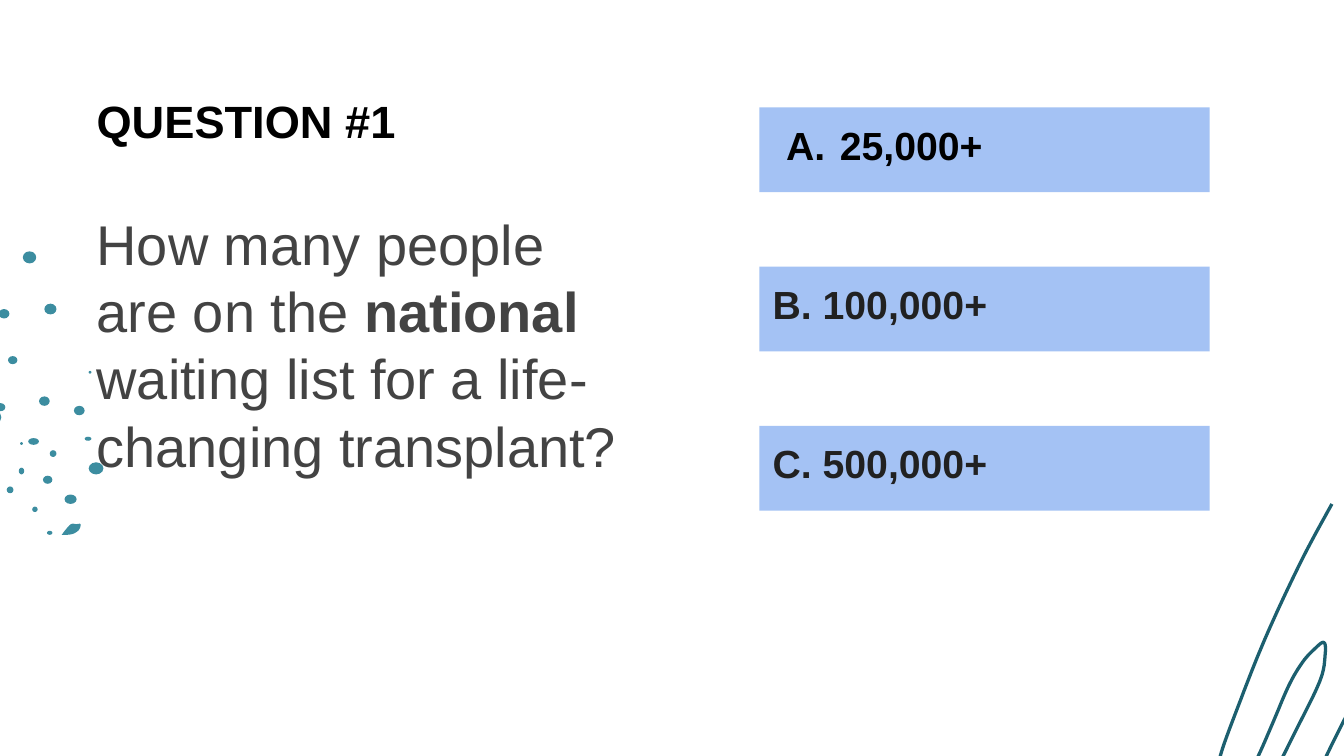
from dataclasses import dataclass

from lxml.etree import SubElement
from pptx import Presentation
from pptx.dml.color import RGBColor
from pptx.enum.shapes import MSO_SHAPE
from pptx.enum.text import MSO_ANCHOR
from pptx.oxml.ns import qn
from pptx.util import Inches, Pt


@dataclass(frozen=True)
class Theme:
    font: str = "Arial"
    title: str = "000000"
    question: str = "434343"
    first_answer: str = "000000"
    answer: str = "212121"
    bar: str = "A4C2F4"
    dots: str = "3C8DA0"
    scribble: str = "1C5F6F"
    title_size: float = 24.2
    question_size: float = 30
    answer_size: float = 21
    scribble_width: float = 1.75


THEME = Theme()

QUESTION = [
    ("How many people are on the ", False),
    ("national ", True),
    ("waiting list for a life-changing transplant?", False),
]
ANSWERS = [
    ("25,000+", THEME.first_answer, True),
    ("B. 100,000+", THEME.answer, False),
    ("C. 500,000+", THEME.answer, False),
]
ANSWER_LEFT, ANSWER_TOP, ANSWER_STEP = 5.65, 0.8, 1.185
ANSWER_WIDTH, ANSWER_HEIGHT = 3.35, 0.63

DOTS = [
    (-0.12, 3.05, 0.13, 0.11), (0.15, 3.29, 0.02, 0.02),
    (0.14, 3.48, 0.04, 0.05), (0.24, 3.77, 0.04, 0.04),
    (0.35, 3.95, 0.04, 0.03), (0.48, 3.68, 0.09, 0.07),
    (0.32, 3.54, 0.07, 0.06), (0.05, 3.62, 0.05, 0.05),
    (0.37, 3.35, 0.05, 0.05), (0.21, 3.26, 0.08, 0.05),
    (0.29, 2.95, 0.08, 0.07), (-0.03, 3.0, 0.07, 0.06),
    (0.06, 2.65, 0.07, 0.06), (-0.01, 2.3, 0.08, 0.07),
    (0.66, 2.76, 0.02, 0.02), (0.55, 3.02, 0.08, 0.07),
    (0.63, 3.25, 0.05, 0.03), (0.66, 3.44, 0.11, 0.09),
    (0.33, 2.26, 0.09, 0.08), (0.17, 1.87, 0.1, 0.09),
]
LEAF = [
    (0.46, 3.98), (0.49, 3.94), (0.53, 3.9), (0.57, 3.9),
    (0.6, 3.9), (0.59, 3.94), (0.55, 3.97), (0.5, 3.98), (0.46, 3.98),
]
SCRIBBLE = [
    (9.91, 3.75), (9.72, 4.1), (9.54, 4.47), (9.38, 4.83), (9.23, 5.21),
    (9.09, 5.59), (9.07, 5.73), (9.1, 5.85), (9.18, 5.87), (9.27, 5.79),
    (9.36, 5.63), (9.47, 5.38), (9.59, 5.1), (9.69, 4.93), (9.78, 4.83),
    (9.85, 4.78), (9.86, 4.87), (9.82, 5.07), (9.63, 5.46), (9.45, 5.82),
    (9.36, 6.0), (9.3, 6.17), (9.32, 6.36), (9.44, 6.38), (9.56, 6.3),
    (9.65, 6.12), (9.76, 5.86), (9.93, 5.5), (10.11, 5.16), (10.27, 4.95),
    (10.39, 4.88), (10.41, 5.1), (10.26, 5.53), (10.09, 5.82),
    (9.9, 6.2), (9.75, 6.53), (9.72, 6.67), (9.8, 6.71), (9.96, 6.57),
    (10.13, 6.25), (10.3, 5.82), (10.5, 5.44), (10.65, 5.22), (10.8, 5.2),
    (10.84, 5.35), (10.77, 5.6), (10.4, 6.27), (10.2, 6.6), (10.09, 6.83),
    (10.13, 6.95), (10.29, 6.97), (10.43, 6.84), (10.62, 6.45),
    (10.85, 5.98), (11.01, 5.65),
]


def smooth(points, steps=6):
    padded = [points[0], *points, points[-1]]
    curve = [points[0]]
    for before, start, end, after in zip(padded, padded[1:], padded[2:], padded[3:]):
        for step in range(1, steps + 1):
            t = step / steps
            curve.append(tuple(
                (2 * b + (c - a) * t + (2 * a - 5 * b + 4 * c - d) * t ** 2
                 + (3 * b - a - 3 * c + d) * t ** 3) / 2
                for a, b, c, d in zip(before, start, end, after)
            ))
    return curve


def fill_shape(shape, color):
    shape.shadow.inherit = False
    shape.fill.solid()
    shape.fill.fore_color.rgb = RGBColor.from_string(color)
    shape.line.fill.background()


def add_shape(slide, kind, frame, color):
    shape = slide.shapes.add_shape(kind, *map(Inches, frame))
    fill_shape(shape, color)


def add_curve(slide, points, close):
    vertices = [(Inches(x), Inches(y)) for x, y in smooth(points)]
    builder = slide.shapes.build_freeform(*vertices[0])
    builder.add_line_segments(vertices[1:], close=close)
    return builder.convert_to_shape()


def add_scribble(slide):
    shape = add_curve(slide, SCRIBBLE, False)
    shape.shadow.inherit = False
    shape.fill.background()
    shape.line.color.rgb = RGBColor.from_string(THEME.scribble)
    shape.line.width = Pt(THEME.scribble_width)


def number_paragraph(para, color):
    properties = para._p.get_or_add_pPr()
    properties.set("marL", str(Inches(0.5)))
    properties.set("indent", str(Inches(-0.4)))
    bullet_color = SubElement(properties, qn("a:buClr"))
    SubElement(bullet_color, qn("a:srgbClr"), val=color)
    SubElement(properties, qn("a:buFont"), typeface=THEME.font)
    SubElement(properties, qn("a:buAutoNum"), type="alphaUcPeriod")


def add_text(slide, frame, spans, size, color,
             anchor=MSO_ANCHOR.TOP, numbered=False):
    text = slide.shapes.add_textbox(*map(Inches, frame)).text_frame
    text.word_wrap = True
    text.vertical_anchor = anchor
    text.margin_left = text.margin_right = Inches(0.1)
    text.margin_top = text.margin_bottom = Inches(0.1)
    para = text.paragraphs[0]
    if numbered:
        number_paragraph(para, color)
    for words, bold in spans:
        span = para.add_run()
        span.text = words
        span.font.name = THEME.font
        span.font.size = Pt(size)
        span.font.bold = bold
        span.font.color.rgb = RGBColor.from_string(color)


def add_answers(slide):
    for index, (words, color, numbered) in enumerate(ANSWERS):
        top = ANSWER_TOP + index * ANSWER_STEP
        frame = (ANSWER_LEFT, top, ANSWER_WIDTH, ANSWER_HEIGHT)
        add_shape(slide, MSO_SHAPE.RECTANGLE, frame, THEME.bar)
        add_text(slide, (ANSWER_LEFT, top, ANSWER_WIDTH, 0.52), [(words, True)],
                 THEME.answer_size, color, numbered=numbered)


def main():
    deck = Presentation()
    deck.slide_width, deck.slide_height = Inches(10), Inches(5.625)
    slide = deck.slides.add_slide(deck.slide_layouts[6])
    fill_shape(add_curve(slide, LEAF, True), THEME.dots)
    for frame in DOTS:
        add_shape(slide, MSO_SHAPE.OVAL, frame, THEME.dots)
    add_scribble(slide)
    add_text(slide, (0.62, 1.46, 4.17, 3.84), QUESTION,
             THEME.question_size, THEME.question)
    add_text(slide, (0.62, 0.58, 8.92, 0.63), [("QUESTION #1", True)],
             THEME.title_size, THEME.title, anchor=MSO_ANCHOR.MIDDLE)
    add_answers(slide)
    deck.save("out.pptx")


if __name__ == "__main__":
    main()
